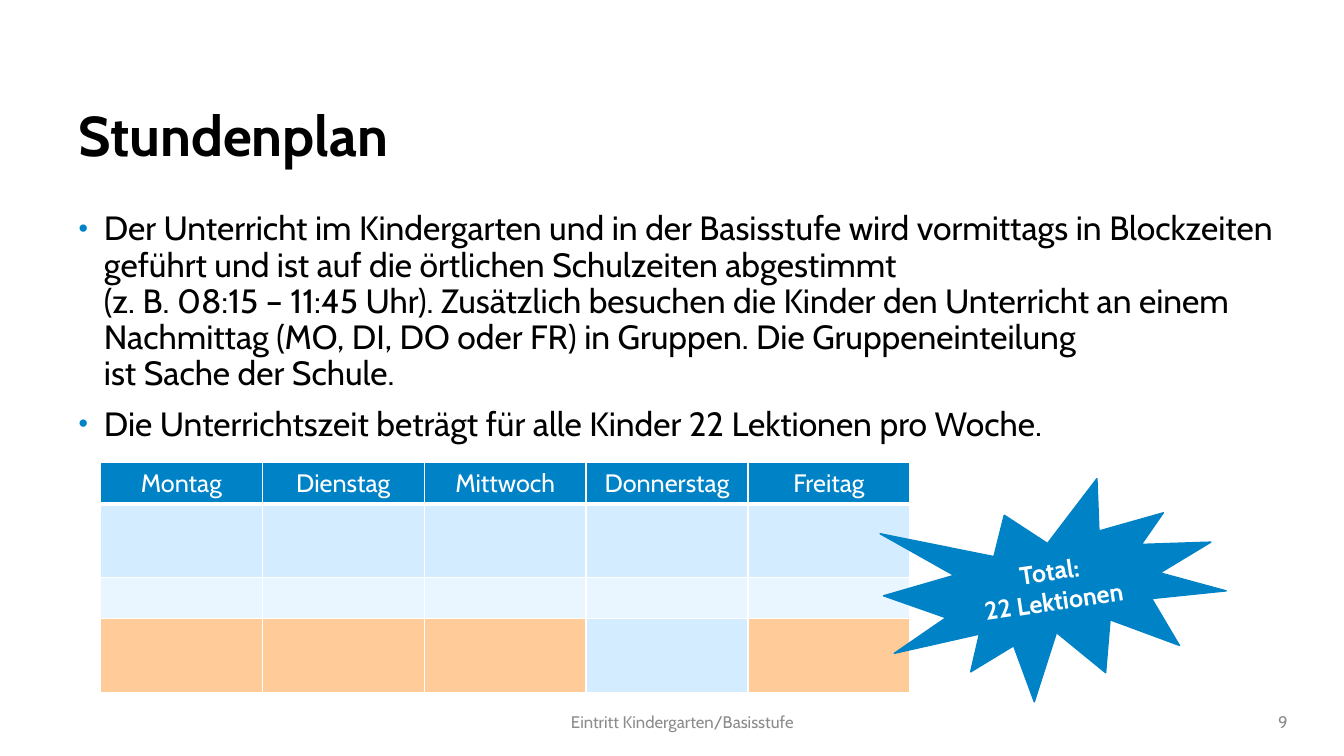
import pptx
import pptx.util
import pptx.dml.color
import pptx.enum.shapes
import pptx.enum.text
import pptx.oxml
import pptx.oxml.ns

Cm = pptx.util.Cm
Pt = pptx.util.Pt
ALIGN = pptx.enum.text.PP_ALIGN
ANCHOR = pptx.enum.text.MSO_ANCHOR

COLOURS = {
    "blue": "0082C7",
    "light": "D3ECFF",
    "pale": "EAF6FF",
    "orange": "FFCC99",
    "black": "000000",
    "grey": "8C8C8C",
    "white": "FFFFFF",
}

WEEKDAYS = ["Montag", "Dienstag", "Mittwoch", "Donnerstag", "Freitag"]
ROW_HEIGHTS = [1.04, 1.85, 1.04, 1.85]
ROW_FILLS = [
    ["blue"] * 5,
    ["light"] * 5,
    ["pale"] * 5,
    ["orange"] * 3 + ["light", "orange"],
]
RULES = [
    "Der Unterricht im Kindergarten und in der Basisstufe wird vormittags in Blockzeiten "
    "geführt und ist auf die örtlichen Schulzeiten abgestimmt \n"
    "(z. B. 08:15 – 11:45 Uhr). Zusätzlich besuchen die Kinder den Unterricht an einem "
    "Nachmittag (MO, DI, DO oder FR) in Gruppen. Die Gruppeneinteilung \n"
    "ist Sache der Schule.",
    "Die Unterrichtszeit beträgt für alle Kinder 22 Lektionen pro Woche.",
]


def rgb(colour):
    return pptx.dml.color.RGBColor.from_string(COLOURS[colour])


def element(tag, content, attributes=""):
    return pptx.oxml.parse_xml(
        f'<a:{tag} {pptx.oxml.ns.nsdecls("a")} {attributes}>{content}</a:{tag}>'
    )


class SlideBuilder:
    font = "Cabin"

    def __init__(self, slide):
        self.slide = slide

    def fill_text(self, frame, lines, size, colour, bold=False, align=ALIGN.LEFT,
                  anchor=ANCHOR.TOP, spacing=None):
        frame.word_wrap = True
        frame.vertical_anchor = anchor
        for index, line in enumerate(lines):
            paragraph = frame.add_paragraph() if index else frame.paragraphs[0]
            paragraph.text = line
            paragraph.alignment = align
            paragraph.line_spacing = spacing
            for run in paragraph.runs:
                run.font.name = self.font
                run.font.size = Pt(size)
                run.font.bold = bold
                run.font.color.rgb = rgb(colour)

    def text(self, box, lines, size, colour, **style):
        frame = self.slide.shapes.add_textbox(*map(Cm, box)).text_frame
        self.fill_text(frame, lines, size, colour, **style)
        return frame

    def bullets(self, box, lines, size, colour):
        frame = self.text(box, lines, size, colour, spacing=0.9)
        for index, paragraph in enumerate(frame.paragraphs):
            if index:
                paragraph.space_before = Pt(10)
            properties = paragraph._p.get_or_add_pPr()
            properties.set("marL", str(Cm(0.64)))
            properties.set("indent", str(-Cm(0.64)))
            properties.append(
                element("buClr", f'<a:srgbClr val="{COLOURS["blue"]}"/>'))
            properties.append(element("buSzPct", "", 'val="80000"'))
            properties.append(element("buFont", "", 'typeface="Arial"'))
            properties.append(element("buChar", "", 'char="•"'))

    def border(self, cell, side, width):
        cell._tc.get_or_add_tcPr().append(element(
            f"ln{side}",
            f'<a:solidFill><a:srgbClr val="{COLOURS["white"]}"/></a:solidFill>',
            f'w="{Pt(width)}"'))

    def timetable(self, left, top, column_width, headings, heights, fills):
        table = self.slide.shapes.add_table(
            len(heights), len(headings), Cm(left), Cm(top),
            Cm(column_width * len(headings)), Cm(sum(heights))).table
        for column in table.columns:
            column.width = Cm(column_width)
        for row_index, height in enumerate(heights):
            table.rows[row_index].height = Cm(height)
            for column_index, fill in enumerate(fills[row_index]):
                cell = table.cell(row_index, column_index)
                for side in "LRTB":
                    heading_rule = row_index == 0 and side == "B"
                    self.border(cell, side, 3 if heading_rule else 1)
                cell.fill.solid()
                cell.fill.fore_color.rgb = rgb(fill)
        for cell, heading in zip(table.rows[0].cells, headings):
            self.fill_text(cell.text_frame, [heading], 18, "white", align=ALIGN.CENTER)
            cell.vertical_anchor = ANCHOR.MIDDLE

    def burst(self, box, lines, rotation):
        burst = self.slide.shapes.add_shape(
            pptx.enum.shapes.MSO_SHAPE.EXPLOSION1, *map(Cm, box))
        burst.rotation = rotation
        burst.shadow.inherit = False
        burst.fill.solid()
        burst.fill.fore_color.rgb = rgb("blue")
        burst.line.color.rgb = rgb("blue")
        burst.line.width = Pt(1)
        self.fill_text(burst.text_frame, lines, 18, "white", bold=True,
                       align=ALIGN.CENTER, anchor=ANCHOR.MIDDLE)


def main():
    presentation = pptx.Presentation()
    presentation.slide_width = Cm(33.87)
    presentation.slide_height = Cm(19.05)
    builder = SlideBuilder(
        presentation.slides.add_slide(presentation.slide_layouts[6]))

    builder.bullets((1.73, 5.21, 30.99, 11.99), RULES, 24, "black")
    builder.text((6.2, 17.7, 22, 1), ["Eintritt Kindergarten/Basisstufe"], 12, "grey",
                 align=ALIGN.CENTER, anchor=ANCHOR.MIDDLE)
    builder.text((28.7, 17.7, 4, 1), ["9"], 12, "grey",
                 align=ALIGN.RIGHT, anchor=ANCHOR.MIDDLE)
    builder.text((1.73, 2.59, 30.99, 2), ["Stundenplan"], 40, "black",
                 bold=True, spacing=0.9)
    builder.timetable(2.53, 11.66, 4.08, WEEKDAYS, ROW_HEIGHTS, ROW_FILLS)
    builder.burst((22.3, 12.25, 8.56, 5.33), ["Total:", "22 Lektionen"], 351.5)

    presentation.save("out.pptx")


if __name__ == "__main__":
    main()
